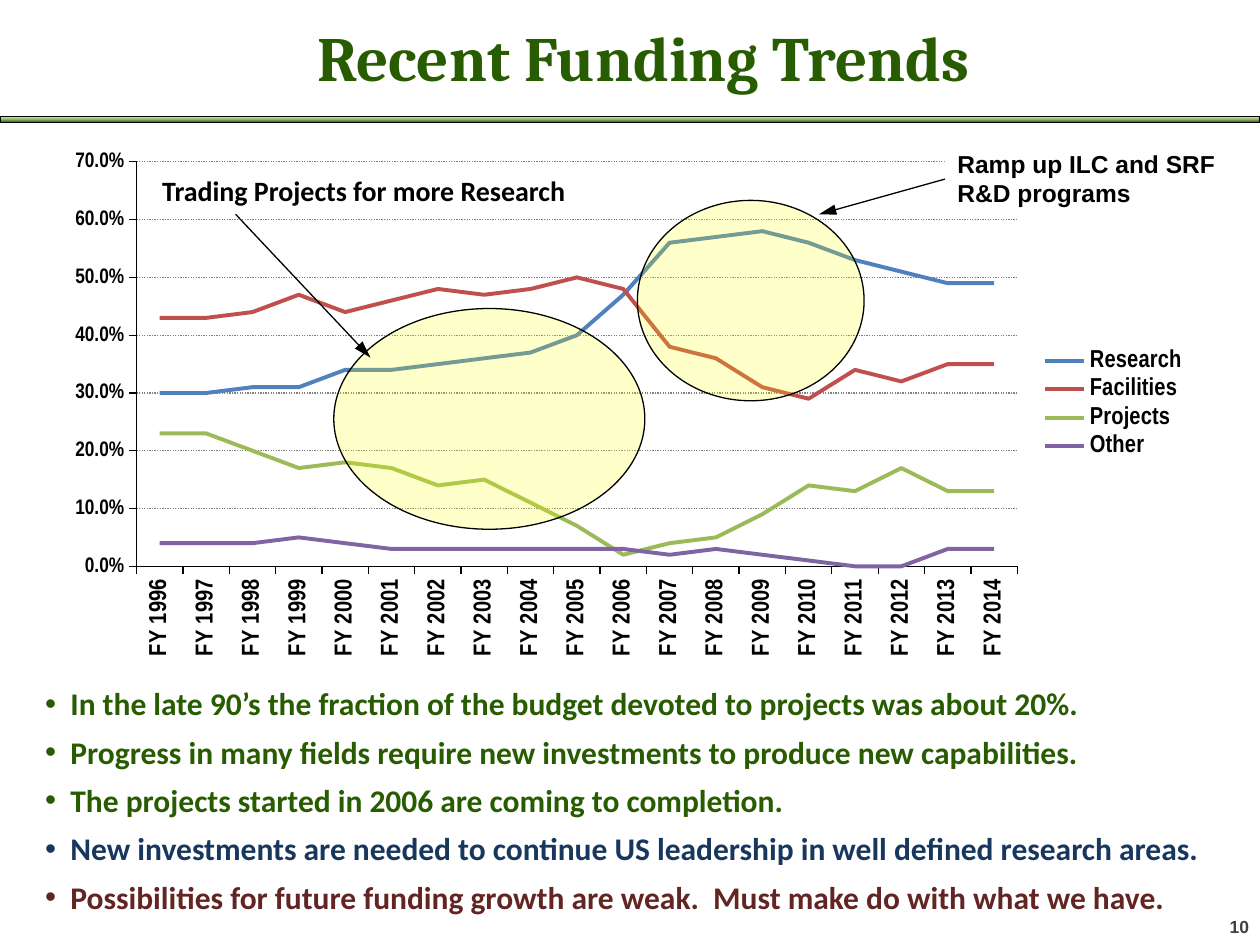
from lxml.etree import SubElement
from pptx import Presentation
from pptx.chart.data import CategoryChartData
from pptx.dml.color import RGBColor
from pptx.enum.chart import XL_CHART_TYPE as ChartType, XL_LEGEND_POSITION as LegendPosition
from pptx.enum.chart import XL_TICK_MARK as TickMark
from pptx.enum.dml import MSO_LINE as Dash
from pptx.enum.shapes import MSO_CONNECTOR as Connector, MSO_SHAPE as Shape
from pptx.enum.text import MSO_ANCHOR as Anchor, PP_ALIGN as Align
from pptx.oxml import parse_xml
from pptx.oxml.ns import nsdecls, qn
from pptx.util import Cm, Pt

COLORS = {
    "black": "000000", "white": "FFFFFF", "green": "285C00", "navy": "17375E",
    "maroon": "632523", "gray": "404040", "grid": "808080", "yellow": "FFFF00",
    "Research": "4F81BD", "Facilities": "C0504D", "Projects": "9BBB59", "Other": "8064A2",
    "bar_top": "DDEBCF", "bar_middle": "9CB86E", "bar_bottom": "156B13",
}
SHARES = {
    "Research": [30, 30, 31, 31, 34, 34, 35, 36, 37, 40, 47, 56, 57, 58, 56, 53, 51, 49, 49],
    "Facilities": [43, 43, 44, 47, 44, 46, 48, 47, 48, 50, 48, 38, 36, 31, 29, 34, 32, 35, 35],
    "Projects": [23, 23, 20, 17, 18, 17, 14, 15, 11, 7, 2, 4, 5, 9, 14, 13, 17, 13, 13],
    "Other": [4, 4, 4, 5, 4, 3, 3, 3, 3, 3, 3, 2, 3, 2, 1, 0, 0, 3, 3],
}
BULLETS = [
    ("In the late 90’s the fraction of the budget devoted to projects was about 20%.", "green"),
    ("Progress in many fields require new investments to produce new capabilities.", "green"),
    ("The projects started in 2006 are coming to completion.", "green"),
    ("New investments are needed to continue US leadership in well defined research areas.", "navy"),
    ("Possibilities for future funding growth are weak.  Must make do with what we have.", "maroon"),
]


def rgb(name):
    return RGBColor.from_string(COLORS[name])


def style_font(font, name, size, color):
    font.name, font.size, font.bold = name, Pt(size), True
    font.color.rgb = rgb(color)


def style_line(line, color="black", width=0.75):
    line.color.rgb = rgb(color)
    line.width = Pt(width)


def add_text(page, place, text, font, size, color="black", align=Align.LEFT, wrap=True):
    box = page.shapes.add_textbox(*map(Cm, place))
    box.text_frame.word_wrap = wrap
    para = box.text_frame.paragraphs[0]
    para.text, para.alignment = text, align
    style_font(para.font, font, size, color)
    return box


def add_bullets(page, place, items):
    frame = page.shapes.add_textbox(*map(Cm, place)).text_frame
    frame.word_wrap = True
    for index, (text, color) in enumerate(items):
        para = frame.add_paragraph() if index else frame.paragraphs[0]
        para.text, para.space_after = text, Pt(6)
        props = para._p.get_or_add_pPr()
        props.set("marL", str(Cm(0.51)))
        props.set("indent", str(-Cm(0.51)))
        SubElement(props, qn("a:buFont"), typeface="Arial")
        SubElement(props, qn("a:buChar"), char="•")
        style_font(para.font, "Calibri", 18, color)


def add_highlight(page, place):
    oval = page.shapes.add_shape(Shape.OVAL, *map(Cm, place))
    oval.shadow.inherit = False
    oval.fill.solid()
    oval.fill.fore_color.rgb = rgb("yellow")
    SubElement(oval._element.spPr.find(".//" + qn("a:srgbClr")), qn("a:alpha"), val="21000")
    style_line(oval.line)


def add_arrow(page, *ends):
    arrow = page.shapes.add_connector(Connector.STRAIGHT, *map(Cm, ends))
    style_line(arrow.line)
    SubElement(arrow.line._get_or_add_ln(), qn("a:tailEnd"), type="triangle", w="med", len="lg")
    SubElement(arrow._element.spPr, qn("a:effectLst"))


def add_title_bar(page, place):
    bar = page.shapes.add_shape(Shape.RECTANGLE, *map(Cm, place))
    bar.shadow.inherit = False
    stops = "".join(
        f'<a:gs pos="{pos}"><a:srgbClr val="{COLORS[name]}"/></a:gs>'
        for pos, name in [(0, "bar_top"), (50000, "bar_middle"), (100000, "bar_bottom")]
    )
    gradient = parse_xml(
        f'<a:gradFill {nsdecls("a")}><a:gsLst>{stops}</a:gsLst>'
        '<a:lin ang="5400000" scaled="0"/></a:gradFill>'
    )
    bar._element.spPr.find(qn("a:prstGeom")).addnext(gradient)
    style_line(bar.line, width=0.5)


def manual_layout(x, y, w, h, inner=False):
    target = '<c:layoutTarget val="inner"/>' if inner else ""
    return parse_xml(
        f'<c:layout {nsdecls("c")}><c:manualLayout>{target}'
        '<c:xMode val="edge"/><c:yMode val="edge"/>'
        f'<c:x val="{x}"/><c:y val="{y}"/><c:w val="{w}"/><c:h val="{h}"/>'
        '</c:manualLayout></c:layout>'
    )


def style_axis(axis, size):
    style_font(axis.tick_labels.font, "Arial Narrow", size, "black")
    style_line(axis.format.line)
    axis.major_tick_mark, axis.minor_tick_mark = TickMark.OUTSIDE, TickMark.NONE


def add_funding_chart(page, place):
    data = CategoryChartData(number_format="0.0%")
    data.categories = [f"FY {year}" for year in range(1996, 2015)]
    for name, percents in SHARES.items():
        data.add_series(name, [percent / 100 for percent in percents])
    chart = page.shapes.add_chart(ChartType.LINE, *map(Cm, place), data).chart
    chart.has_title = False
    style_font(chart.font, "Arial Narrow", 10, "black")
    for series in chart.plots[0].series:
        series.smooth = False
        style_line(series.format.line, series.name, 2.25)
    chart.plots[0].vary_by_categories = False

    style_axis(chart.category_axis, 14)
    chart.category_axis._element.txPr.find(qn("a:bodyPr")).set("rot", "-5400000")
    values = chart.value_axis
    style_axis(values, 12)
    values.minimum_scale, values.maximum_scale, values.major_unit = 0, 0.7, 0.1
    values.tick_labels.number_format = "0.0%"
    values.tick_labels.number_format_is_linked = False
    grid = values.major_gridlines.format.line
    style_line(grid, "grid")
    grid.dash_style = Dash.ROUND_DOT

    chart.has_legend = True
    legend = chart.legend
    legend.position, legend.include_in_layout = LegendPosition.RIGHT, False
    style_font(legend.font, "Arial Narrow", 14, "black")
    legend._element.find(qn("c:legendPos")).addnext(manual_layout(0.86, 0.29, 0.13, 0.28))
    area = chart._chartSpace.chart.plotArea
    for layout in area.findall(qn("c:layout")):
        area.remove(layout)
    area.insert(0, manual_layout(0.07, 0.04, 0.77, 0.77, inner=True))


def main():
    deck = Presentation()
    deck.slide_width, deck.slide_height = Cm(25.4), Cm(19.05)
    page = deck.slides.add_slide(deck.slide_layouts[6])

    add_funding_chart(page, (1.14, 2.84, 23.06, 10.59))
    title = add_text(page, (4.55, 0.13, 15.24, 2.01), "Recent Funding Trends",
                     "Cambria", 36, "green", Align.RIGHT)
    title.text_frame.vertical_anchor = Anchor.MIDDLE
    add_bullets(page, (0.66, 13.67, 23.88, 4.95), BULLETS)
    add_highlight(page, (6.73, 6.22, 6.27, 4.45))
    add_text(page, (3.02, 3.38, 9.68, 0.94), "Trading Projects for more Research", "Calibri", 16)
    add_highlight(page, (12.85, 4.04, 4.57, 4.04))
    ramp = add_text(page, (19.05, 2.87, 6.1, 1.45), "Ramp up ILC and SRF R&D programs", "Arial", 14)
    ramp.fill.solid()
    ramp.fill.fore_color.rgb = rgb("white")
    add_arrow(page, 19.05, 3.61, 16.51, 4.32)
    add_title_bar(page, (0, 2.34, 25.4, 0.13))
    add_text(page, (24.54, 18.34, 0.91, 0.69), "10", "Arial", 10, "gray", wrap=False)
    add_arrow(page, 4.75, 4.32, 7.47, 7.21)
    deck.save("out.pptx")


if __name__ == "__main__":
    main()
